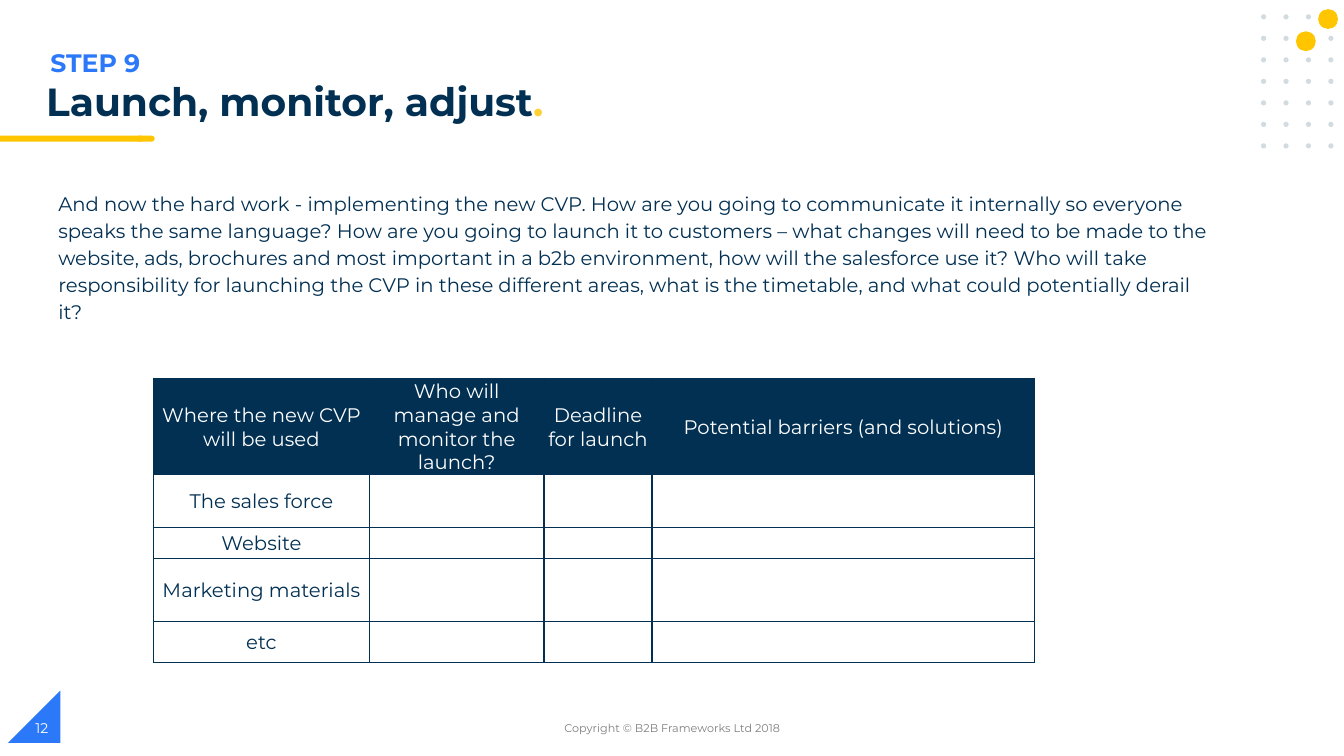
import itertools

import lxml.etree
import pptx
import pptx.dml.color
import pptx.enum.shapes
import pptx.enum.text
import pptx.oxml.ns
import pptx.util

Cm, Pt = pptx.util.Cm, pptx.util.Pt
MSO = pptx.enum.shapes.MSO_SHAPE
ALIGN = pptx.enum.text.PP_ALIGN
ANCHOR = pptx.enum.text.MSO_ANCHOR
AUTO = pptx.enum.text.MSO_AUTO_SIZE

COLORS = {
    "navy": "023053",
    "blue": "2B79F8",
    "yellow": "FFC600",
    "full_stop": "FFD033",
    "dot": "D1DBE0",
    "grey": "7F7F7F",
    "white": "FFFFFF",
}


def rgb(name):
    return pptx.dml.color.RGBColor.from_string(COLORS[name])


def add_text(p, text, size=14, color="navy", bold=False, align=ALIGN.LEFT,
             spacing=None, font="Montserrat"):
    """Append a formatted run to paragraph p."""
    p.alignment = align
    if spacing:
        p.line_spacing = spacing
    r = p.add_run()
    r.text = text
    r.font.name = font
    r.font.size = Pt(size)
    r.font.bold = bold
    r.font.color.rgb = rgb(color)


class SlideBuilder:
    """Holds the slide and draws each kind of element in its style."""

    def __init__(self, prs):
        self.slide = prs.slides.add_slide(prs.slide_layouts[5])

    def shape(self, kind, x, y, w, h, fill, rotation=0):
        sp = self.slide.shapes.add_shape(kind, Cm(x), Cm(y), Cm(w), Cm(h))
        sp.shadow.inherit = False
        sp.fill.solid()
        sp.fill.fore_color.rgb = rgb(fill)
        sp.line.fill.background()
        sp.rotation = rotation

    def title(self, x, y, w, h, text, end):
        sp = self.slide.shapes.title
        sp.left, sp.top, sp.width, sp.height = Cm(x), Cm(y), Cm(w), Cm(h)
        tf = sp.text_frame
        tf.auto_size = AUTO.NONE
        tf.vertical_anchor = ANCHOR.TOP
        p = tf.paragraphs[0]
        add_text(p, text, size=28, bold=True, spacing=0.9)
        add_text(p, end, size=28, bold=True, spacing=0.9, color="full_stop")

    def text(self, x, y, w, h, text, anchor=ANCHOR.TOP, **style):
        sp = self.slide.shapes.add_textbox(Cm(x), Cm(y), Cm(w), Cm(h))
        tf = sp.text_frame
        tf.word_wrap = True
        tf.vertical_anchor = anchor
        add_text(tf.paragraphs[0], text, **style)

    def border(self, cell, color, width):
        tc_pr = cell._tc.get_or_add_tcPr()
        qn = pptx.oxml.ns.qn
        for i, side in enumerate(("a:lnL", "a:lnR", "a:lnT", "a:lnB")):
            ln = lxml.etree.Element(qn(side), w=str(Pt(width)))
            fill = lxml.etree.SubElement(ln, qn("a:solidFill"))
            lxml.etree.SubElement(fill, qn("a:srgbClr"), val=COLORS[color])
            tc_pr.insert(i, ln)

    def table(self, x, y, col_widths, row_heights, rows):
        frame = self.slide.shapes.add_table(
            len(row_heights), len(col_widths), Cm(x), Cm(y),
            Cm(sum(col_widths)), Cm(sum(row_heights)))
        table = frame.table
        table.horz_banding = False
        for col, width in zip(table.columns, col_widths):
            col.width = Cm(width)
        for row, height in zip(table.rows, row_heights):
            row.height = Cm(height)
        for i, j in itertools.product(range(len(row_heights)),
                                      range(len(col_widths))):
            cell = table.cell(i, j)
            cell.margin_left = cell.margin_right = cell.margin_top = Cm(0.03)
            cell.margin_bottom = 0
            cell.vertical_anchor = ANCHOR.MIDDLE
            if i == 0:
                cell.fill.solid()
                cell.fill.fore_color.rgb = rgb("navy")
            else:
                cell.fill.background()
            label = rows[i][j] if j < len(rows[i]) else ""
            add_text(cell.text_frame.paragraphs[0], label, align=ALIGN.CENTER,
                     color="white" if i == 0 else "navy")
            self.border(cell, "navy", 1)


def main():
    prs = pptx.Presentation()
    prs.slide_width, prs.slide_height = Cm(33.87), Cm(19.05)
    s = SlideBuilder(prs)

    # Corner triangle behind the page number
    s.shape(MSO.RIGHT_TRIANGLE, 0.2, 17.4, 1.32, 1.32, "blue", rotation=270)

    # Dot grid with two highlighted dots
    for row, col in itertools.product(range(7), range(4)):
        s.shape(MSO.OVAL, 31.78 + 0.565 * col, 0.36 + 0.542 * row,
                0.13, 0.13, "dot")
    for x, y in ((33.22, 0.23), (32.66, 0.79)):
        s.shape(MSO.OVAL, x, y, 0.5, 0.5, "yellow")

    # Launch plan
    s.table(3.87, 9.53, (5.44, 4.4, 2.72, 9.65),
            (2.06, 1.32, 0.79, 1.58, 1.04), (
                ("Where the new CVP will be used",
                 "Who will manage and monitor the launch?",
                 "Deadline for launch",
                 "Potential barriers (and solutions)"),
                ("The sales force",),
                ("Website",),
                ("Marketing materials",),
                ("etc",)))

    # Introduction
    s.text(1.22, 4.62, 29.69, 2.92,
           "And now the hard work - implementing the new CVP. How are you "
           "going to communicate it internally so everyone speaks the same "
           "language? How are you going to launch it to customers – what "
           "changes will need to be made to the website, ads, brochures and "
           "most important in a b2b environment, how will the salesforce use "
           "it? Who will take responsibility for launching the CVP in these "
           "different areas, what is the timetable, and what could "
           "potentially derail it?", spacing=1.15)

    # Heading with underline
    s.title(0.91, 1.96, 19.38, 1.52, "Launch, monitor, adjust", ".")
    s.text(1.02, 1.07, 3.53, 1.02, "STEP 9", size=18, color="blue", bold=True)
    s.shape(MSO.FLOWCHART_TERMINATOR, 3.42, 3.42, 0.48, 0.15, "yellow")
    s.shape(MSO.RECTANGLE, 0, 3.42, 3.58, 0.15, "yellow")

    # Footer
    s.text(11.23, 17.83, 11.43, 1.02, "Copyright © B2B Frameworks Ltd 2018",
           anchor=ANCHOR.MIDDLE, size=8, color="grey", align=ALIGN.CENTER)
    s.text(0.64, 17.83, 7.62, 1.02, "12",
           anchor=ANCHOR.MIDDLE, size=10, color="white")

    prs.save("out.pptx")


if __name__ == "__main__":
    main()
